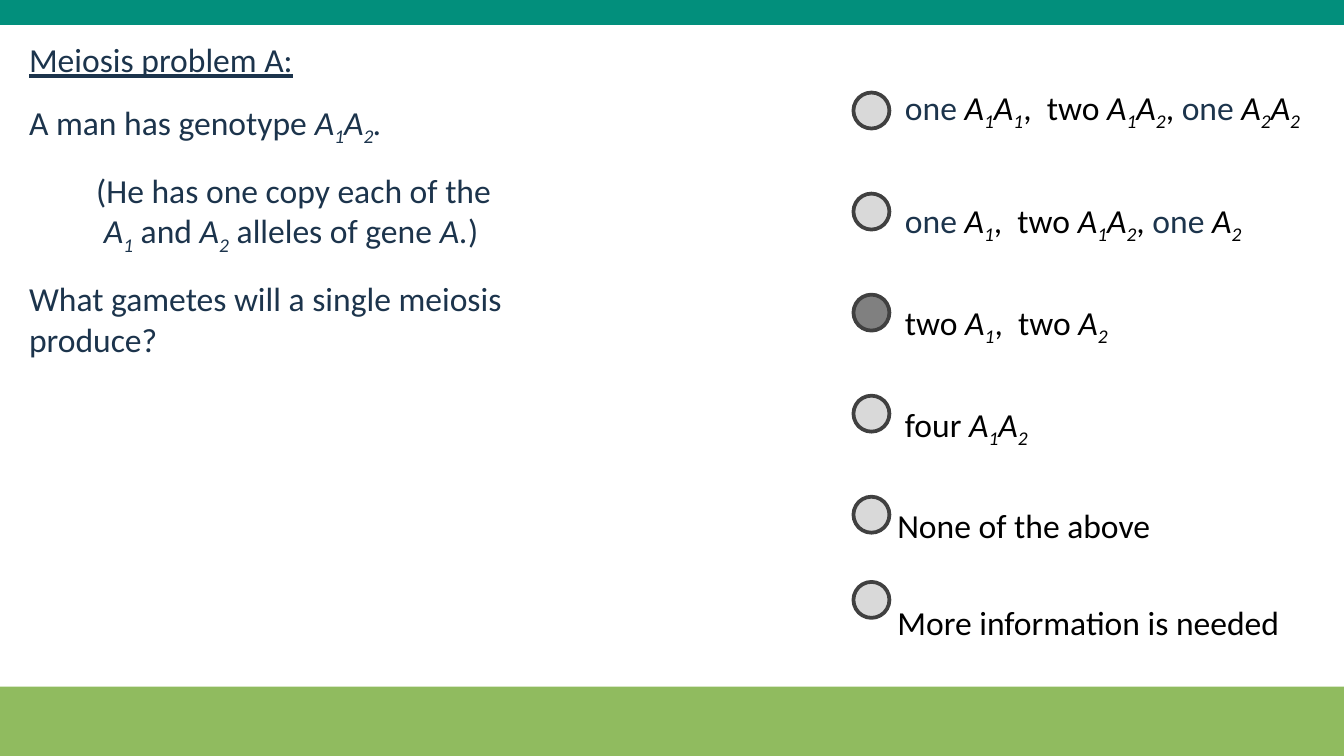
"""Build a quiz slide on the gametes made by one meiosis."""
from pptx import Presentation
from pptx.dml.color import RGBColor
from pptx.enum.shapes import MSO_SHAPE
from pptx.util import Cm, Pt

NAVY, BLACK = "1C344C", "000000"

deck = Presentation()
deck.slide_width, deck.slide_height = Cm(25.4), Cm(14.29)
slide = deck.slides.add_slide(deck.slide_layouts[6])


def paint(color, value):
    color.rgb = RGBColor.from_string(value)


def write(box, lines, tone):
    """Split lines at bars; * is italic, _ subscript, ! underlined, ^ navy."""
    frame = box.text_frame
    frame.word_wrap = True
    for i, (gap, left, line) in enumerate(lines):
        para = frame.add_paragraph() if i else frame.paragraphs[0]
        para.space_after = Pt(gap)
        if left:
            para._p.get_or_add_pPr().set("marL", str(Cm(left)))
        for part in line.split("|"):
            mark = part[0] if part[0] in "*_!^" else ""
            run = para.add_run()
            run.text = part[len(mark):]
            font = run.font
            font.name, font.size = "Calibri", Pt(18)
            paint(font.color, NAVY if mark == "^" else tone)
            if mark == "!":
                font.underline = True
            if mark in ("*", "_"):
                font.italic = True
            if mark == "_":
                run._r.get_or_add_rPr().set("baseline", "-25000")


task = [
    (12, 0, "!Meiosis problem A:"),
    (12, 0, "A man has genotype |*A|_1|*A|_2|*."),
    (0, 1.27, "(He has one copy each of the"),
    (12, 1.27, " |*A|_1| and|* A|_2| alleles of gene |*A.|)"),
    (12, 0, "What gametes will a single meiosis produce?"),
]
box = slide.shapes.add_textbox(Cm(0.3), Cm(0.61), Cm(11.15), Cm(6.15))
write(box, task, NAVY)

for top, high, fill in [(12.98, 1.31, "90BB5F"), (0, 0.47, "028F7C")]:
    bar = slide.shapes.add_shape(
        MSO_SHAPE.RECTANGLE, Cm(0), Cm(top), Cm(25.4), Cm(high))
    bar.shadow.inherit = False
    bar.fill.solid()
    paint(bar.fill.fore_color, fill)
    bar.line.fill.background()

picks = [
    (36, 0, " |^one |*A|_1|*A|_1|,  two |*A|_1|*A|_2|, |^one |*A|_2|*A|_2"),
    (30, 0, " |^one |*A|_1|,  two|* A|_1|*A|_2|, |^one |*A|_2"),
    (30, 0, " two |*A|_1|,  two |*A|_2"),
    (30, 0, " four |*A|_1|*A|_2"),
    (30, 0, "None of the above"),
    (30, 0, "More information is needed"),
]
box = slide.shapes.add_textbox(Cm(16.71), Cm(1.52), Cm(8.79), Cm(10.44))
write(box, picks, BLACK)

tops = [1.75 + 1.91 * i for i in range(5)] + [11]
for i, top in enumerate(tops):
    dot = slide.shapes.add_shape(
        MSO_SHAPE.OVAL, Cm(16.13), Cm(top), Cm(0.68), Cm(0.68))
    dot.shadow.inherit = False
    dot.fill.solid()
    paint(dot.fill.fore_color, "808080" if i == 2 else "D9D9D9")
    paint(dot.line.color, "404040")
    dot.line.width = Pt(2)

deck.save("out.pptx")
